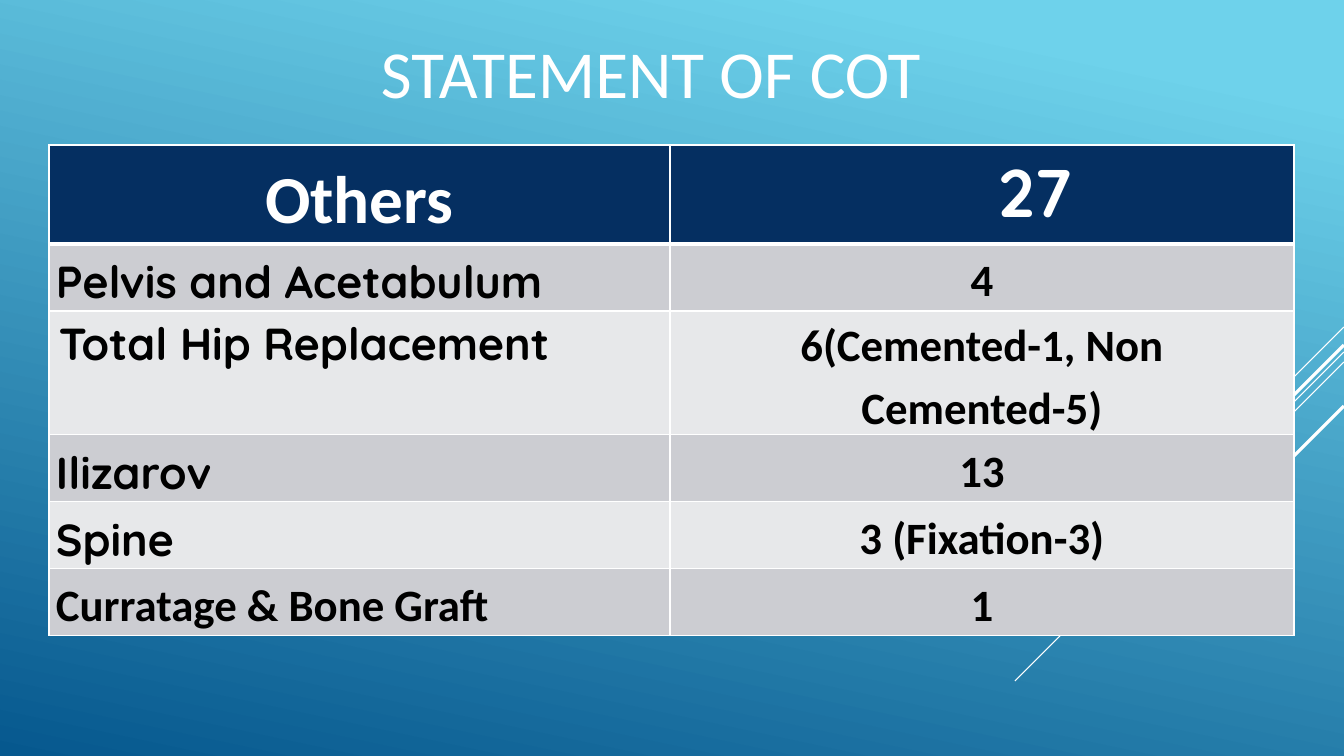
"""Build the COT statement slide with its table of other procedures."""
from lxml.etree import SubElement
from pptx import Presentation
from pptx.dml.color import RGBColor
from pptx.enum.shapes import MSO_CONNECTOR as Connector
from pptx.enum.text import MSO_ANCHOR as Anchor, PP_ALIGN as Align
from pptx.oxml.ns import qn
from pptx.util import Emu, Pt

PX_PER_INCH = 100.8
SLIDE_W, SLIDE_H = 1344, 756

WHITE = RGBColor(0xFF, 0xFF, 0xFF)
BLACK = RGBColor(0, 0, 0)
SKY = RGBColor(0x6E, 0xD2, 0xEB)
OCEAN = RGBColor(0x06, 0x58, 0x8E)
NAVY = RGBColor(0x05, 0x2F, 0x61)
BANDS = (RGBColor(0xCC, 0xCD, 0xD2), RGBColor(0xE7, 0xE8, 0xEA))

DIAGONALS = [(327, 101, 0.75), (352, 329, 0.75), (362, 209, 0.75),
             (345, 192, 2.25), (406, 140, 2.25)]
COLUMN_WIDTHS = (621, 624)
HEADER_HEIGHT, ROW_HEIGHT = 99, 67
PROCEDURES = [
    ("Pelvis and Acetabulum", "Quicksand", "4"),
    ("Total Hip Replacement", "Quicksand", "6(Cemented-1, Non Cemented-5)"),
    ("Ilizarov", "Quicksand", "13"),
    ("Spine", "Quicksand", "3 (Fixation-3)"),
    ("Curratage & Bone Graft", "Calibri", "1"),
]


def px(length):
    """Turn slide pixels into EMU."""
    return Emu(round(length * 914400 / PX_PER_INCH))


def paint_background(slide):
    """Fill the slide with the blue gradient."""
    fill = slide.background.fill
    fill.gradient()
    fill.gradient_angle = 258
    for stop, color, position in zip(fill.gradient_stops, (SKY, OCEAN), (0.1, 1)):
        stop.color.rgb = color
        stop.position = position


def add_diagonal(slide, top, run, weight):
    """Draw a 45-degree line down and left from the right edge."""
    diagonal = slide.shapes.add_connector(
        Connector.STRAIGHT, px(SLIDE_W), px(top), px(SLIDE_W - run), px(top + run))
    diagonal.line.color.rgb = WHITE
    diagonal.line.width = Pt(weight)
    SubElement(diagonal._element.spPr, qn("a:effectLst"))


def add_run(paragraph, text, font, size, color, bold):
    """Append one formatted run."""
    run = paragraph.add_run()
    run.text = text
    run.font.name = font
    run.font.size = Pt(size)
    run.font.color.rgb = color
    run.font.bold = bold


def add_title(slide, text):
    """Place the slide heading."""
    frame = slide.shapes.add_textbox(px(88), px(15), px(1185), px(113)).text_frame
    frame.word_wrap = True
    frame.vertical_anchor = Anchor.MIDDLE
    frame.margin_left = px(293)
    add_run(frame.paragraphs[0], text, "Calibri", 48, WHITE, False)


def add_border(cell, side, weight):
    """Give one side of a cell a white line."""
    line = SubElement(cell._tc.get_or_add_tcPr(), qn(f"a:ln{side}"), w=str(Pt(weight)))
    SubElement(SubElement(line, qn("a:solidFill")), qn("a:srgbClr"), val=str(WHITE))


def fill_cell(cell, text, font, size, color, fill, align, bottom=1):
    """Write a centred-height cell with its borders and fill."""
    for side, weight in (("L", 1), ("R", 1), ("T", 1), ("B", bottom)):
        add_border(cell, side, weight)
    cell.fill.solid()
    cell.fill.fore_color.rgb = fill
    cell.vertical_anchor = Anchor.MIDDLE
    cell.margin_left = cell.margin_right = px(7)
    cell.margin_top = cell.margin_bottom = 0
    paragraph = cell.text_frame.paragraphs[0]
    paragraph.alignment = align
    paragraph.line_spacing = 1.15
    add_run(paragraph, text, font, size, color, True)


def align_top(cell, left):
    """Set a cell's text at the top with single spacing and a given indent."""
    cell.vertical_anchor = Anchor.TOP
    cell.margin_left, cell.margin_right = px(left), px(10)
    cell.margin_top = cell.margin_bottom = px(5)
    paragraph = cell.text_frame.paragraphs[0]
    paragraph.alignment = Align.LEFT
    paragraph.line_spacing = 1.0


def add_procedures(slide):
    """Build the table of procedures and counts."""
    height = HEADER_HEIGHT + ROW_HEIGHT * len(PROCEDURES)
    table = slide.shapes.add_table(
        len(PROCEDURES) + 1, 2, px(49), px(145), px(sum(COLUMN_WIDTHS)), px(height)).table
    table.first_row = table.horz_banding = False
    for column, width in zip(table.columns, COLUMN_WIDTHS):
        column.width = px(width)
    for row in table.rows:
        row.height = px(ROW_HEIGHT)
    table.rows[0].height = px(HEADER_HEIGHT)

    for column, (text, font) in enumerate([("Others", "Calibri"), ("27", "Quicksand")]):
        fill_cell(table.cell(0, column), text, font, 48, WHITE, NAVY, Align.CENTER, 3)
    for row, (procedure, font, count) in enumerate(PROCEDURES, 1):
        band = BANDS[(row - 1) % 2]
        fill_cell(table.cell(row, 0), procedure, font, 32, BLACK, band, Align.LEFT)
        fill_cell(table.cell(row, 1), count, "Calibri", 32, BLACK, band, Align.CENTER)
    align_top(table.cell(0, 1), 329)
    align_top(table.cell(2, 0), 10)


def main():
    """Assemble and save the slide."""
    deck = Presentation()
    deck.slide_width, deck.slide_height = px(SLIDE_W), px(SLIDE_H)
    slide = deck.slides.add_slide(deck.slide_layouts[6])
    paint_background(slide)
    for diagonal in DIAGONALS:
        add_diagonal(slide, *diagonal)
    add_title(slide, "STATEMENT OF COT")
    add_procedures(slide)
    deck.save("out.pptx")


if __name__ == "__main__":
    main()
